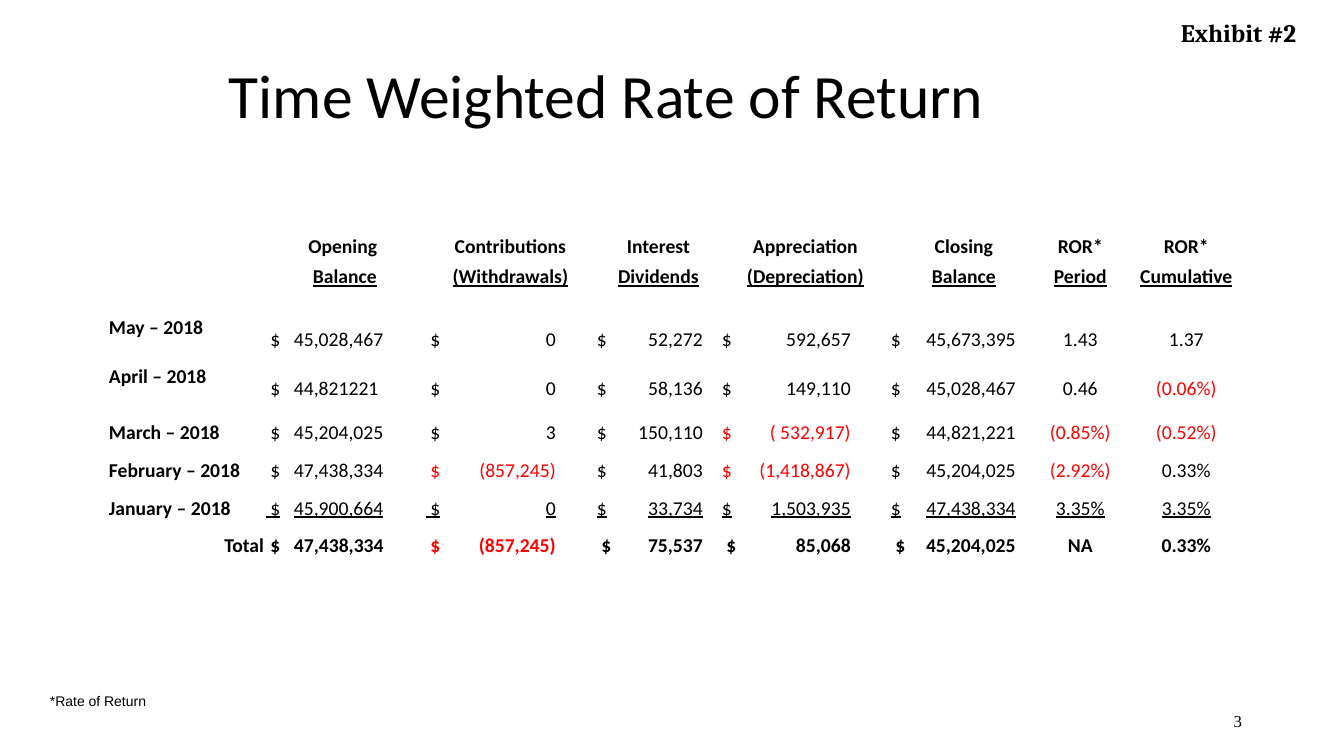
from dataclasses import dataclass

from lxml.etree import SubElement
from pptx import Presentation
from pptx.dml.color import RGBColor
from pptx.enum.text import MSO_ANCHOR, PP_ALIGN
from pptx.oxml.ns import qn
from pptx.util import Emu, Pt


@dataclass(frozen=True)
class Theme:
    """Colours, fonts and type sizes of the slide."""
    ink: RGBColor = RGBColor(0, 0, 0)
    loss: RGBColor = RGBColor(255, 0, 0)
    body_font: str = "Calibri"
    exhibit_font: str = "Cambria"
    note_font: str = "Arial"
    number_font: str = "Times New Roman"
    title: int = 44
    exhibit: int = 18
    table: int = 14
    blank: int = 12
    number: int = 12
    note: int = 10


THEME = Theme()
COLUMNS = [157, 160, 171, 125, 169, 148, 85, 127]
ROWS = [30, 31, 23, 49, 49, 38, 38, 38, 37, 37, 64]
HEADINGS = [
    ["", "Opening ", "Contributions", "Interest", "Appreciation", "Closing", "ROR*", "ROR*"],
    ["", "Balance", "(Withdrawals)", "Dividends", "(Depreciation)", "Balance", "Period", "Cumulative"],
]
RETURNS = [
    ["May – 2018", "45,028,467", "0", "52,272", "592,657", "45,673,395", "1.43", "1.37"],
    ["April – 2018", "44,821221", "0", "58,136", "149,110", "45,028,467", "0.46", "(0.06%)"],
    ["March – 2018", "45,204,025", "3", "150,110", "( 532,917)", "44,821,221", "(0.85%)", "(0.52%)"],
    ["February – 2018", "47,438,334", "(857,245)", "41,803", "(1,418,867)", "45,204,025", "(2.92%)", "0.33%"],
    ["January – 2018", "45,900,664", "0", "33,734", "1,503,935", "47,438,334", "3.35%", "3.35%"],
    ["Total", "47,438,334", "(857,245)", "75,537", "85,068", "45,204,025", "NA", "0.33%"],
]
FIRST_RETURN = 3
AMOUNT_TABS = {1: (28, "l"), 2: (130, "r"), 3: (106, "r"), 4: (129, "r"), 5: (125, "r")}


def px(n):
    """Turn whole pixels into EMU."""
    return Emu(round(n * 9144000 / 1008))


def set_font(p, name, size, color=THEME.ink, bold=False, underline=False):
    """Set the font of a paragraph."""
    p.font.name = name
    p.font.size = Pt(size)
    p.font.bold = bold
    p.font.underline = underline
    p.font.color.rgb = color


def add_text(s, box, text, name, size, bold=False, align=PP_ALIGN.LEFT, anchor=MSO_ANCHOR.TOP):
    """Add a one-line text box and return its paragraph."""
    tf = s.shapes.add_textbox(*map(px, box)).text_frame
    tf.word_wrap = True
    tf.vertical_anchor = anchor
    p = tf.paragraphs[0]
    p.add_run().text = text
    p.alignment = align
    set_font(p, name, size, bold=bold)
    return p


def add_tab(p, position, align):
    """Give a paragraph one tab stop."""
    stops = SubElement(p._p.get_or_add_pPr(), qn("a:tabLst"))
    SubElement(stops, qn("a:tab"), pos=str(px(position)), algn=align)


def fill_cell(cell, text="", align=PP_ALIGN.LEFT, color=THEME.ink, bold=False, underline=False, tab=None):
    """Write one unfilled table cell."""
    cell.fill.background()
    cell.vertical_anchor = MSO_ANCHOR.MIDDLE
    cell.margin_left = cell.margin_right = cell.margin_top = px(1)
    cell.margin_bottom = 0
    p = cell.text_frame.paragraphs[0]
    if tab:
        add_tab(p, *tab)
    if text:
        p.add_run().text = text
    p.alignment = align
    set_font(p, THEME.body_font, THEME.table if text else THEME.blank, color, bold, underline)


def fill_return(cell, row, col):
    """Write one label, dollar amount or rate."""
    text = RETURNS[row][col]
    total = row == len(RETURNS) - 1
    if col == 0:
        fill_cell(cell, text, PP_ALIGN.RIGHT if total else PP_ALIGN.LEFT, bold=True)
        if row < 2:
            cell.margin_bottom = px(24)
        return
    color = THEME.loss if "(" in text else THEME.ink
    tab = AMOUNT_TABS.get(col)
    if tab:
        text = f"{' ' if total or col < 3 else ''}$\t{text}"
    align = PP_ALIGN.LEFT if tab else PP_ALIGN.CENTER
    fill_cell(cell, text, align, color, total, row == len(RETURNS) - 2, tab)


def add_returns_table(s):
    """Add the table of monthly returns."""
    box = map(px, (108, 231, sum(COLUMNS), sum(ROWS)))
    table = s.shapes.add_table(len(ROWS), len(COLUMNS), *box).table
    table.first_row = table.horz_banding = False
    for column, width in zip(table.columns, COLUMNS):
        column.width = px(width)
    for i, height in enumerate(ROWS):
        table.rows[i].height = px(height)
        for j in range(len(COLUMNS)):
            cell = table.cell(i, j)
            if i < len(HEADINGS):
                fill_cell(cell, HEADINGS[i][j], PP_ALIGN.CENTER, bold=True, underline=i == 1)
            elif 0 <= i - FIRST_RETURN < len(RETURNS):
                fill_return(cell, i - FIRST_RETURN, j)
            else:
                fill_cell(cell)


def main():
    """Build the slide."""
    prs = Presentation()
    prs.slide_width, prs.slide_height = px(1344), px(756)
    s = prs.slides.add_slide(prs.slide_layouts[6])
    title = add_text(s, (219, 42, 907, 114), "Time Weighted Rate of Return",
                     THEME.body_font, THEME.title, anchor=MSO_ANCHOR.MIDDLE)
    title.line_spacing = 0.9
    add_text(s, (950, 701, 302, 40), "3", THEME.number_font, THEME.number,
             align=PP_ALIGN.RIGHT, anchor=MSO_ANCHOR.MIDDLE)
    add_returns_table(s)
    add_text(s, (1171, 12, 160, 40), "Exhibit #2", THEME.exhibit_font, THEME.exhibit, bold=True)
    add_text(s, (40, 688, 302, 27), "*Rate of Return", THEME.note_font, THEME.note)
    prs.save("out.pptx")


if __name__ == "__main__":
    main()
